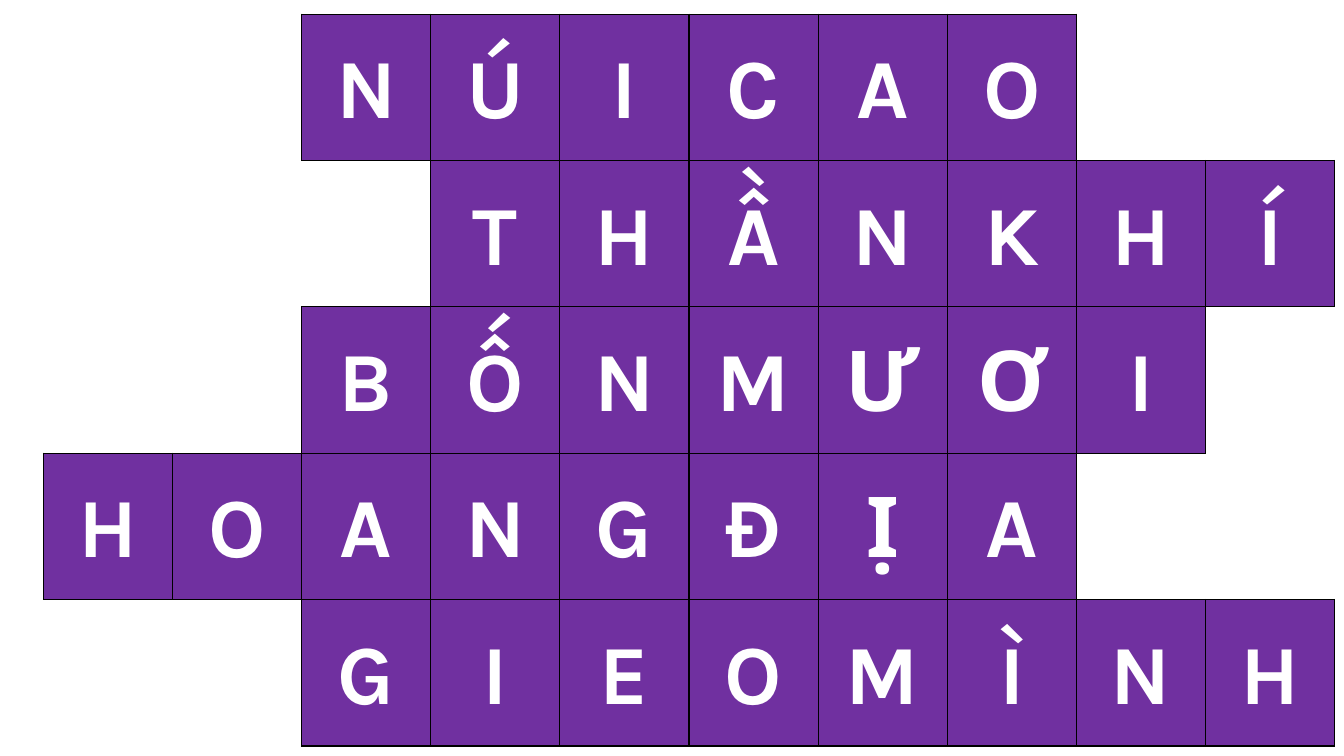
from lxml.etree import SubElement
from pptx import Presentation
from pptx.dml.color import RGBColor
from pptx.enum.text import MSO_ANCHOR as Anchor, PP_ALIGN as Align
from pptx.oxml.ns import qn
from pptx.util import Inches, Pt

# Content: first column of each answer, and its letters
ANSWERS = [
    (2, "NÚICAO"),
    (3, "THẦNKHÍ"),
    (2, "BỐNMƯƠI"),
    (0, "HOANGĐỊA"),
    (2, "GIEOMÌNH"),
]
COLUMNS = 10

# Grid, in inches
SLIDE_W, SLIDE_H = 13.33, 7.5
LEFT, TOP = 0.43, 0.14
GRID_W, GRID_H = 12.81, 7.26

# Formats
PURPLE, WHITE, BLACK = "7030A0", "FFFFFF", "000000"
CELL = {"vertical_anchor": Anchor.MIDDLE, "margin_left": Inches(0.07),
        "margin_right": Inches(0.07), "margin_top": 0, "margin_bottom": 0}
PARAGRAPH = {"alignment": Align.CENTER, "line_spacing": 1.07, "space_after": Pt(8)}
LETTER = {"name": "Karla", "size": Pt(60), "bold": True}
TABLE = {"first_row": False, "horz_banding": False}
SIDES = {"a:lnL": (0, -1), "a:lnR": (0, 1), "a:lnT": (-1, 0), "a:lnB": (1, 0)}


def color(value):
    return RGBColor.from_string(value)


def apply(target, formats):
    for key, value in formats.items():
        setattr(target, key, value)


def add_border(cell, side, visible):
    line = SubElement(cell._tc.get_or_add_tcPr(), qn(side), w=str(Pt(1)))
    if visible:
        fill = SubElement(line, qn("a:solidFill"))
        SubElement(fill, qn("a:srgbClr"), val=BLACK)
    else:
        SubElement(line, qn("a:noFill"))


def main():
    letters = {(row, start + step): letter
               for row, (start, answer) in enumerate(ANSWERS)
               for step, letter in enumerate(answer)}

    prs = Presentation()
    prs.slide_width, prs.slide_height = Inches(SLIDE_W), Inches(SLIDE_H)
    slide = prs.slides.add_slide(prs.slide_layouts[6])

    # Crossword grid
    crossword = slide.shapes.add_table(
        len(ANSWERS), COLUMNS, Inches(LEFT), Inches(TOP),
        Inches(GRID_W), Inches(GRID_H)).table
    apply(crossword, TABLE)

    for row in range(len(ANSWERS)):
        for column in range(COLUMNS):
            cell = crossword.cell(row, column)
            letter = letters.get((row, column))
            apply(cell, CELL)

            # An edge shows wherever it touches a letter
            for side, (down, across) in SIDES.items():
                neighbour = (row + down, column + across)
                add_border(cell, side, letter is not None or neighbour in letters)

            cell.fill.solid()
            cell.fill.fore_color.rgb = color(PURPLE if letter else WHITE)
            if letter:
                paragraph = cell.text_frame.paragraphs[0]
                apply(paragraph, PARAGRAPH)
                run = paragraph.add_run()
                run.text = letter
                apply(run.font, LETTER)
                run.font.color.rgb = color(WHITE)

    prs.save("out.pptx")


if __name__ == "__main__":
    main()
